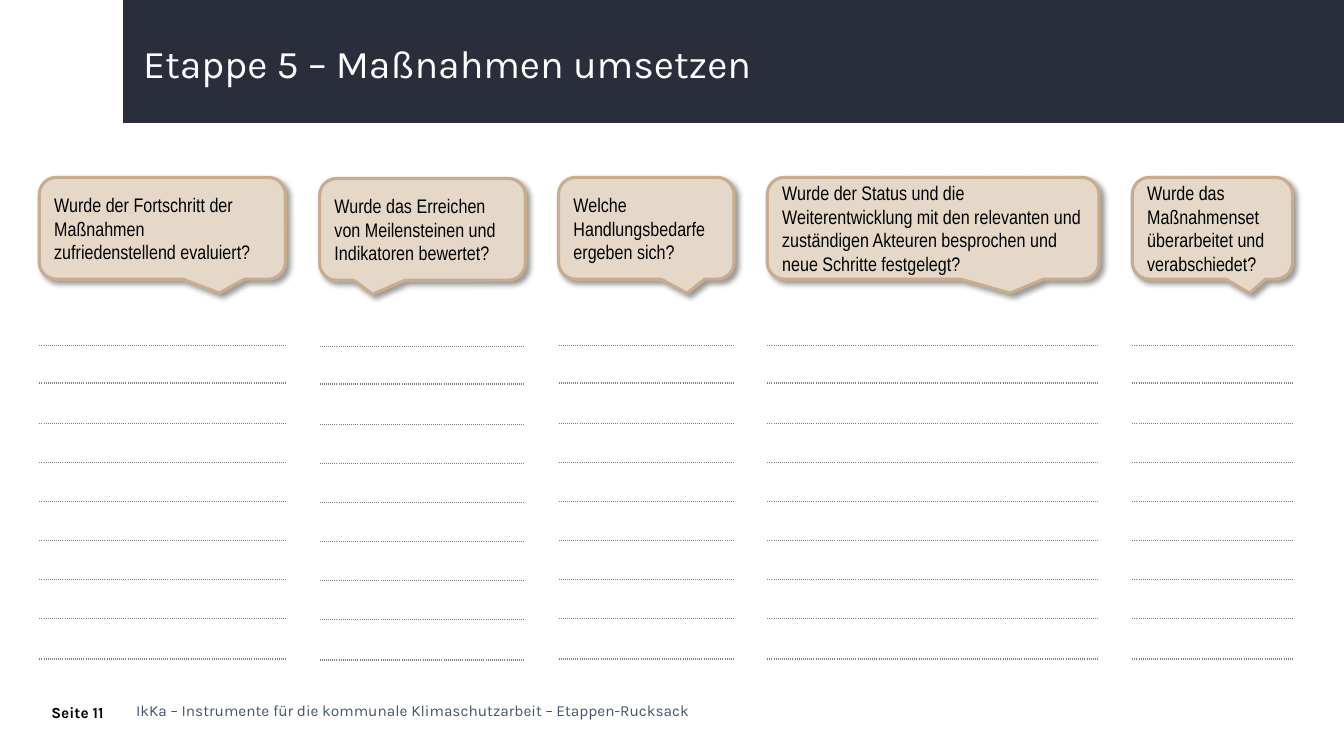
from lxml import etree
from pptx import Presentation
from pptx.dml.color import RGBColor
from pptx.enum.shapes import MSO_SHAPE
from pptx.enum.text import MSO_ANCHOR, PP_ALIGN
from pptx.oxml import parse_xml
from pptx.oxml.ns import nsdecls, qn
from pptx.util import Inches, Pt

NAVY = RGBColor(0x2A, 0x2E, 0x3B)
SLATE = RGBColor(0x44, 0x54, 0x6A)
SAND = RGBColor(0xE5, 0xD8, 0xC9)
TAN = RGBColor(0xC9, 0xAC, 0x8D)
GRAY = RGBColor(0x80, 0x80, 0x80)
BLACK = RGBColor(0, 0, 0)
WHITE = RGBColor(0xFF, 0xFF, 0xFF)

PLAIN_TABLE = "{2D5ABB26-0587-4C30-8999-92F81FD0307C}"
ROW_HEIGHTS = [0.37, 0.37, 0.4, 0.39, 0.39, 0.38, 0.39, 0.39, 0.4]
CALLOUT_HEIGHT = 1.01
TABLE_OFFSET = 1.3

# left, top, width, horizontal tip of the callout, question
QUESTIONS = [
    (0.39, 1.76, 2.44, 0.232,
     "Wurde der Fortschritt der Maßnahmen zufriedenstellend evaluiert?"),
    (3.17, 1.77, 2.04, -0.242,
     "Wurde das Erreichen von Meilensteinen und Indikatoren bewertet?"),
    (5.54, 1.76, 1.74, 0.232, "Welche Handlungsbedarfe ergeben sich?"),
    (7.61, 1.76, 3.29, 0.232,
     "Wurde der Status und die Weiterentwicklung mit den relevanten und "
     "zuständigen Akteuren besprochen und neue Schritte festgelegt?"),
    (11.23, 1.76, 1.59, 0.232,
     "Wurde das Maßnahmenset überarbeitet und verabschiedet?"),
]


def add_run(p, text, size, font, color, bold=False):
    r = p.add_run()
    r.text = text
    r.font.size = Pt(size)
    r.font.name = font
    r.font.bold = bold
    r.font.color.rgb = color


def add_header(slide, left, top, width, height, text):
    # Dark bar, placed behind the title
    bar = slide.shapes.add_shape(MSO_SHAPE.RECTANGLE, Inches(left), Inches(top),
                                 Inches(width), Inches(height))
    bar.shadow.inherit = False
    bar.fill.solid()
    bar.fill.fore_color.rgb = NAVY
    bar.line.fill.background()
    title = slide.shapes.title
    title._element.addprevious(bar._element)

    # Title
    title.left, title.top = Inches(left + 0.1), Inches(top + 0.35)
    title.width, title.height = Inches(11.5), Inches(0.61)
    tf = title.text_frame
    tf.vertical_anchor = MSO_ANCHOR.MIDDLE
    p = tf.paragraphs[0]
    p.alignment = PP_ALIGN.LEFT
    p.line_spacing = 0.9
    add_run(p, text, 28, "Karla", WHITE)


def add_footer_text(slide, left, top, width, height, text, color, bold=False):
    box = slide.shapes.add_textbox(Inches(left), Inches(top),
                                   Inches(width), Inches(height))
    tf = box.text_frame
    tf.word_wrap = True
    tf.margin_left = tf.margin_right = tf.margin_top = tf.margin_bottom = 0
    tf.vertical_anchor = MSO_ANCHOR.MIDDLE
    add_run(tf.paragraphs[0], text, 11, "Karla", color, bold)


def add_shadow(sp):
    sp.shadow.inherit = False
    effects = sp._element.spPr.find(qn("a:effectLst"))
    effects.append(parse_xml(
        f'<a:outerShdw {nsdecls("a")} blurRad="{Pt(4)}" dist="{Pt(3)}" '
        'dir="2700000" algn="tl" rotWithShape="0"><a:srgbClr val="000000">'
        '<a:alpha val="40000"/></a:srgbClr></a:outerShdw>'))


def add_callout(slide, left, top, width, height, tip, text):
    sp = slide.shapes.add_shape(MSO_SHAPE.ROUNDED_RECTANGULAR_CALLOUT,
                                Inches(left), Inches(top),
                                Inches(width), Inches(height))
    for i, value in enumerate((tip, 0.637, 0.167)):
        sp.adjustments[i] = value
    sp.fill.solid()
    sp.fill.fore_color.rgb = SAND
    sp.line.color.rgb = TAN
    sp.line.width = Pt(2.25)
    add_shadow(sp)
    tf = sp.text_frame
    tf.word_wrap = True
    tf.vertical_anchor = MSO_ANCHOR.MIDDLE
    p = tf.paragraphs[0]
    p.alignment = PP_ALIGN.LEFT
    add_run(p, text, 14, "Arial Narrow", BLACK)


def add_bottom_border(cell):
    tc_pr = cell._tc.get_or_add_tcPr()
    border = etree.Element(qn("a:lnB"), w=str(Pt(1)))
    fill = etree.SubElement(border, qn("a:solidFill"))
    etree.SubElement(fill, qn("a:srgbClr"), val=str(GRAY))
    etree.SubElement(border, qn("a:prstDash"), val="sysDot")
    tc_pr.insert(0, border)


def add_writing_lines(slide, left, top, width):
    frame = slide.shapes.add_table(len(ROW_HEIGHTS), 1, Inches(left), Inches(top),
                                   Inches(width), Inches(sum(ROW_HEIGHTS)))
    table = frame.table
    table.first_row = table.horz_banding = False
    table._tbl.tblPr.find(qn("a:tableStyleId")).text = PLAIN_TABLE
    for row, height in zip(table.rows, ROW_HEIGHTS):
        row.height = Inches(height)
        cell = row.cells[0]
        cell.text_frame.paragraphs[0].font.size = Pt(14)
        cell.fill.background()
        add_bottom_border(cell)


def add_question_column(slide, left, top, width, tip, text):
    add_callout(slide, left, top, width, CALLOUT_HEIGHT, tip, text)
    add_writing_lines(slide, left, top + TABLE_OFFSET, width)


def main():
    prs = Presentation()
    prs.slide_width, prs.slide_height = Inches(13.33), Inches(7.5)
    slide = prs.slides.add_slide(prs.slide_layouts[5])

    add_header(slide, 1.22, 0, 12.11, 1.22, "Etappe 5 – Maßnahmen umsetzen")
    for question in QUESTIONS:
        add_question_column(slide, *question)

    # Footer
    add_footer_text(slide, 0.51, 6.95, 0.73, 0.24, "Seite 11", BLACK, bold=True)
    add_footer_text(slide, 1.35, 6.95, 5.57, 0.19,
                    "IkKa – Instrumente für die kommunale Klimaschutzarbeit – "
                    "Etappen-Rucksack", SLATE)
    prs.save("out.pptx")


if __name__ == "__main__":
    main()
